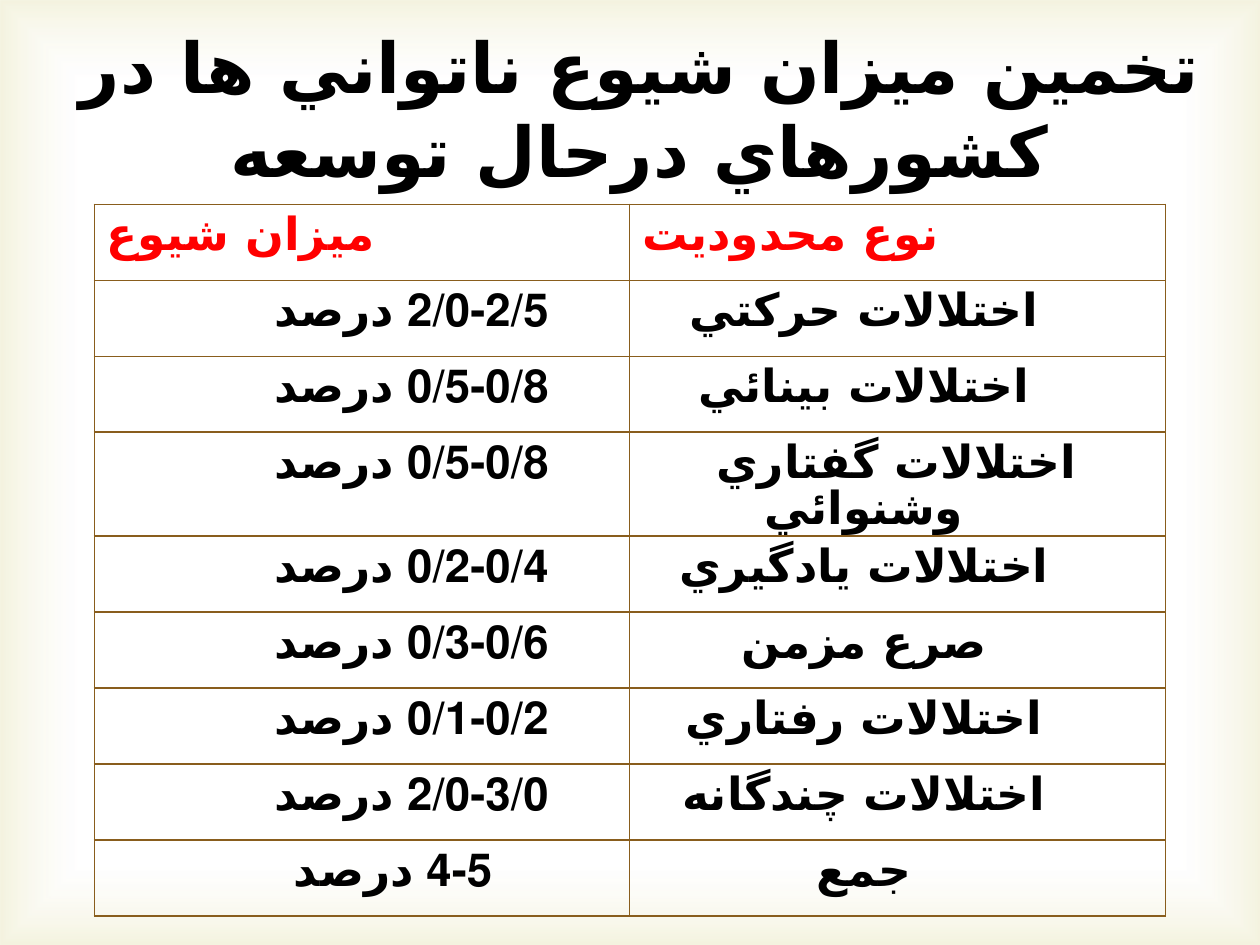
from lxml import etree
from pptx import Presentation
from pptx.dml.color import RGBColor
from pptx.enum.shapes import MSO_SHAPE
from pptx.enum.text import MSO_ANCHOR, PP_ALIGN
from pptx.oxml.ns import qn
from pptx.util import Cm, Pt

RECTANGLE = MSO_SHAPE.RECTANGLE
MIDDLE = MSO_ANCHOR.MIDDLE
CENTER, LEFT = PP_ALIGN.CENTER, PP_ALIGN.LEFT

BLACK = RGBColor(0x00, 0x00, 0x00)
RED = RGBColor(0xFF, 0x00, 0x00)
WHITE = RGBColor(0xFF, 0xFF, 0xFF)
SAND = RGBColor(0xD1, 0xCA, 0x75)
BROWN = RGBColor(0x89, 0x5D, 0x1D)

PERSIAN_FONT = "DejaVu Sans"
TITLE = "تخمين ميزان شيوع ناتواني ها در كشورهاي درحال توسعه"
HEADINGS = ("ميزان شيوع", "نوع محدوديت")
PERCENT = "درصد"
PREVALENCE = (
    ("2/0-2/5", "اختلالات حركتي"),
    ("0/5-0/8", "اختلالات بينائي"),
    ("0/5-0/8", "اختلالات گفتاري وشنوائي"),
    ("0/2-0/4", "اختلالات يادگيري"),
    ("0/3-0/6", "صرع مزمن"),
    ("0/1-0/2", "اختلالات رفتاري"),
    ("2/0-3/0", "اختلالات چندگانه"),
    ("4-5", "جمع"),
)
WRAPPED_ROW = 3
WRAPPED_HEIGHT = Cm(2.09)
CELL_MARGIN = Cm(0.25)
RATE_INSET = Cm(2.25)
TOTAL_RATE_INSET = Cm(1.5)
TYPE_INSET = Cm(1.6)
WRAPPED_INDENT = Cm(1.3)


def add_color(parent, color, alpha=None):
    node = etree.SubElement(parent, qn("a:srgbClr"), val=str(color))
    if alpha is not None:
        etree.SubElement(node, qn("a:alpha"), val=str(alpha * 1000))


def add_glow(slide, left, top, width, height):
    glow = slide.shapes.add_shape(RECTANGLE, left, top, width, height)
    glow.shadow.inherit = False
    glow.line.fill.background()
    glow.fill.gradient()
    gradient = glow.fill._xPr.find(qn("a:gradFill"))
    for child in list(gradient):
        gradient.remove(child)
    stops = etree.SubElement(gradient, qn("a:gsLst"))
    for position, color, alpha in ((83, WHITE, 11), (100, SAND, 23)):
        stop = etree.SubElement(stops, qn("a:gs"), pos=str(position * 1000))
        add_color(stop, color, alpha)
    spread = etree.SubElement(gradient, qn("a:path"), path="rect")
    etree.SubElement(spread, qn("a:fillToRect"),
                     {side: "50000" for side in "ltrb"})


def add_persian(paragraph, text):
    run = paragraph.add_run()
    run.text = text
    etree.SubElement(run._r.get_or_add_rPr(), qn("a:cs"),
                     typeface=PERSIAN_FONT)


def style_paragraph(paragraph, font_name, size, color, align, rtl=False):
    paragraph.alignment = align
    paragraph.font.name = font_name
    paragraph.font.size = Pt(size)
    paragraph.font.bold = True
    paragraph.font.color.rgb = color
    if rtl:
        paragraph._p.get_or_add_pPr().set("rtl", "1")


def add_title(slide, left, top, width, height):
    frame = slide.shapes.add_textbox(left, top, width, height).text_frame
    frame.word_wrap = True
    frame.vertical_anchor = MIDDLE
    paragraph = frame.paragraphs[0]
    add_persian(paragraph, TITLE)
    style_paragraph(paragraph, "Vollkorn", 40, BLACK, CENTER, True)


def add_borders(cell):
    properties = cell._tc.get_or_add_tcPr()
    for position, side in enumerate(("lnL", "lnR", "lnT", "lnB")):
        border = etree.Element(qn(f"a:{side}"), w=str(Pt(1)))
        add_color(etree.SubElement(border, qn("a:solidFill")), BROWN)
        properties.insert(position, border)


def fill_cell(cell, text, color, align, rate=None):
    cell.fill.background()
    cell.margin_left = cell.margin_right = CELL_MARGIN
    cell.margin_top, cell.margin_bottom = Cm(0.2), 0
    paragraph = cell.text_frame.paragraphs[0]
    if rate:
        paragraph.add_run().text = f"{rate} "
    add_persian(paragraph, text)
    style_paragraph(paragraph, "Calibri", 26, color, align, bool(rate))
    paragraph.line_spacing = 0.86
    paragraph.space_before = Pt(5)
    add_borders(cell)
    return paragraph


def add_prevalence_table(slide, left, top, width, height):
    table = slide.shapes.add_table(
        len(PREVALENCE) + 1, len(HEADINGS), left, top, width, height).table
    table.first_row = table.horz_banding = False
    table.rows[WRAPPED_ROW].height = WRAPPED_HEIGHT
    for column, heading in enumerate(HEADINGS):
        fill_cell(table.cell(0, column), heading, RED, LEFT)
    for row, (rate, limitation) in enumerate(PREVALENCE, 1):
        rate_cell, type_cell = table.cell(row, 0), table.cell(row, 1)
        fill_cell(rate_cell, PERCENT, BLACK, CENTER, rate)
        limitation_line = fill_cell(type_cell, limitation, BLACK, CENTER)
        is_total = row == len(PREVALENCE)
        rate_cell.margin_left = TOTAL_RATE_INSET if is_total else RATE_INSET
        type_cell.margin_right = TYPE_INSET
        if row == WRAPPED_ROW:
            limitation_line._p.get_or_add_pPr().set(
                "indent", str(WRAPPED_INDENT))


def main():
    deck = Presentation()
    deck.slide_width, deck.slide_height = Cm(25.4), Cm(19.05)
    slide = deck.slides.add_slide(deck.slide_layouts[6])
    add_glow(slide, 0, 0, deck.slide_width, deck.slide_height)
    add_title(slide, Cm(0.89), Cm(0.79), Cm(24), Cm(2.74))
    add_prevalence_table(slide, Cm(1.9), Cm(4.12), Cm(21.59), Cm(13.78))
    deck.save("out.pptx")


if __name__ == "__main__":
    main()
